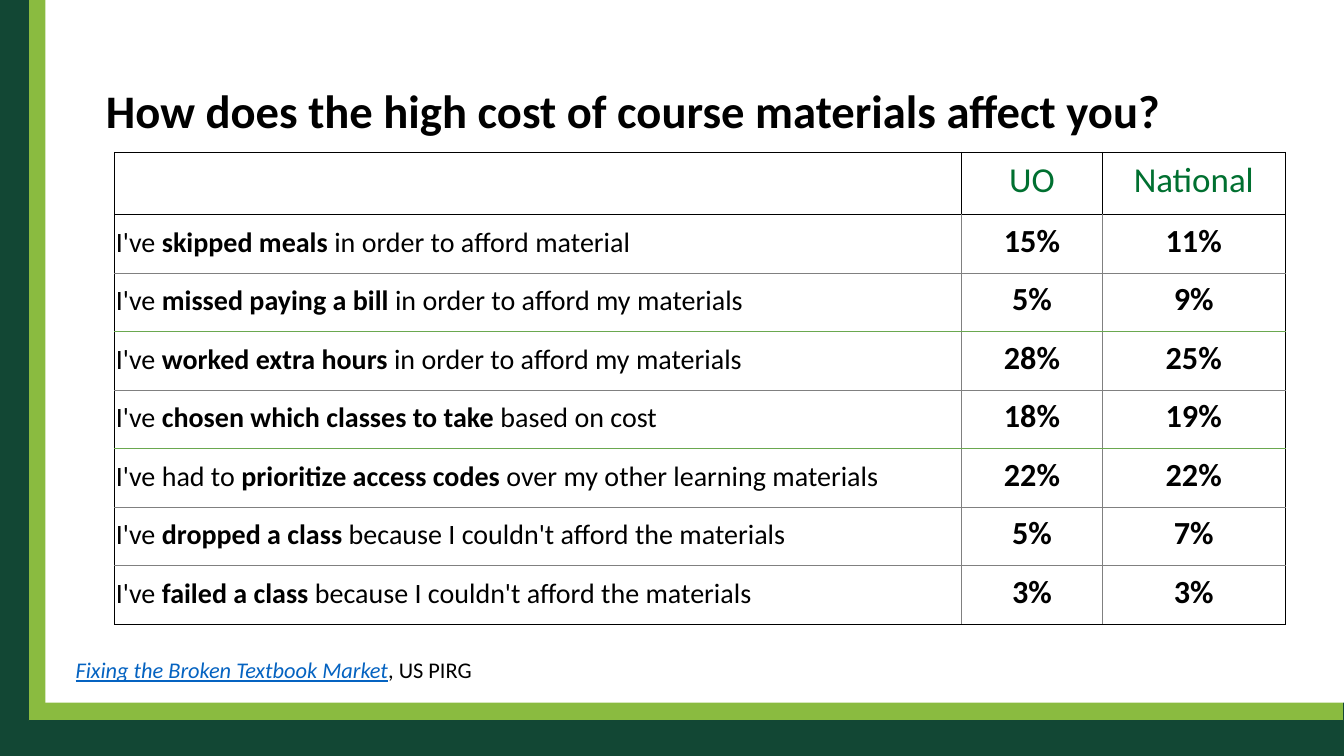
import pptx
import pptx.util
import pptx.dml.color
import pptx.enum.shapes
import pptx.enum.text
import pptx.oxml
import pptx.oxml.ns

RGBColor = pptx.dml.color.RGBColor
Align = pptx.enum.text.PP_ALIGN
Anchor = pptx.enum.text.MSO_ANCHOR
Inches = pptx.util.Inches
Pt = pptx.util.Pt

WIDE, HIGH = Inches(13.33), Inches(7.5)
FONT = "Calibri"
DARK = RGBColor(0x12, 0x47, 0x34)
LIME = RGBColor(0x8A, 0xBB, 0x40)
GREEN = RGBColor(0x00, 0x70, 0x30)
LEAF = RGBColor(0x6A, 0xA8, 0x4F)
GRAY = RGBColor(0x80, 0x80, 0x80)
BLUE = RGBColor(0x05, 0x63, 0xC1)
BLACK = RGBColor(0, 0, 0)
WHITE = RGBColor(255, 255, 255)

HEADS = ["UO", "National"]
COLS = [63.02, 10.43, 13.65]
ROW = 7.73
ROWS = [
    (("I've ", "skipped meals", " in order to afford material"), "15%", "11%"),
    (("I've ", "missed paying a bill", " in order to afford my materials"), "5%", "9%"),
    (("I've ", "worked extra hours", " in order to afford my materials"), "28%", "25%"),
    (("I've ", "chosen which classes to take", " based on cost"), "18%", "19%"),
    (("I've had to ", "prioritize access codes", " over my other learning materials"), "22%", "22%"),
    (("I've ", "dropped a class ", "because I couldn't afford the materials"), "5%", "7%"),
    (("I've ", "failed a class", " because I couldn't afford the materials"), "3%", "3%"),
]


def across(share):
    return round(WIDE * share / 100)


def down(share):
    return round(HIGH * share / 100)


def place(left, top, width, height):
    return across(left), down(top), across(width), down(height)


def style(font, size, color, bold=False):
    font.name, font.size, font.bold = FONT, Pt(size), bold
    font.color.rgb = color


def add_panel(slide, spot, color, line=None):
    panel = slide.shapes.add_shape(
        pptx.enum.shapes.MSO_SHAPE.RECTANGLE, *place(*spot))
    panel.shadow.inherit = False
    panel.fill.solid()
    panel.fill.fore_color.rgb = color
    if line is None:
        panel.line.fill.background()
    else:
        panel.line.color.rgb = line
        panel.line.width = Pt(0.75)


def add_text(slide, spot, anchor):
    frame = slide.shapes.add_textbox(*place(*spot)).text_frame
    frame.word_wrap = True
    frame.vertical_anchor = anchor
    frame.margin_left = frame.margin_right = Inches(0.13)
    frame.margin_top = frame.margin_bottom = Inches(0.13)
    return frame.paragraphs[0]


def add_title(slide):
    para = add_text(slide, (6.9, 5.33, 86.27, 19.33), Anchor.MIDDLE)
    para.text = "How does the high cost of course materials affect you?"
    para.line_spacing = 0.9
    style(para.font, 33.3, BLACK, True)


def add_note(slide):
    para = add_text(slide, (4.65, 85.07, 46.8, 7.2), Anchor.TOP)
    name, owner = para.add_run(), para.add_run()
    name.text = "Fixing the Broken Textbook Market"
    owner.text = ", US PIRG"
    style(name.font, 16, BLUE)
    name.font.italic = name.font.underline = True
    style(owner.font, 16, BLACK)


def set_edges(cell, colors):
    props = cell._tc.get_or_add_tcPr()
    for spot, (side, color) in enumerate(zip("LRTB", colors)):
        edge = pptx.oxml.parse_xml(
            f'<a:ln{side} {pptx.oxml.ns.nsdecls("a")} w="9525"><a:solidFill>'
            f'<a:srgbClr val="{color}"/></a:solidFill></a:ln{side}>')
        props.insert(spot, edge)


def edge_colors(row, col):
    def level(line):
        if line in (0, 1, len(ROWS) + 1):
            return BLACK
        return LEAF if line in (3, 5) else GRAY

    def upright(line):
        return BLACK if row == 0 or line in (0, len(COLS)) else GRAY

    return upright(col), upright(col + 1), level(row), level(row + 1)


def fill_cell(cell, text, size, color, bold):
    para = cell.text_frame.paragraphs[0]
    para.text = text
    para.alignment = Align.CENTER
    para.line_spacing = 1.15
    style(para.font, size, color, bold)


def fill_claim(cell, parts):
    para = cell.text_frame.paragraphs[0]
    for spot, part in enumerate(parts):
        run = para.add_run()
        run.text = part
        style(run.font, 20, BLACK, spot == 1)


def add_grid(slide):
    count = len(ROWS) + 1
    spot = place(8.55, 20.13, sum(COLS), ROW * count)
    grid = slide.shapes.add_table(count, len(COLS), *spot).table
    for col, share in zip(grid.columns, COLS):
        col.width = across(share)
    for row, line in enumerate(grid.rows):
        line.height = down(ROW)
        for col, cell in enumerate(line.cells):
            cell.fill.solid()
            cell.fill.fore_color.rgb = WHITE
            cell.vertical_anchor = Anchor.BOTTOM
            cell.margin_left = cell.margin_right = cell.margin_top = Inches(0.01)
            cell.margin_bottom = Inches(0.13)
            set_edges(cell, edge_colors(row, col))
    for col, head in enumerate(HEADS, 1):
        fill_cell(grid.cell(0, col), head, 25, GREEN, False)
    for row, (claim, *rates) in enumerate(ROWS, 1):
        fill_claim(grid.cell(row, 0), claim)
        for col, rate in enumerate(rates, 1):
            fill_cell(grid.cell(row, col), rate, 23, BLACK, True)


def main():
    deck = pptx.Presentation()
    deck.slide_width, deck.slide_height = WIDE, HIGH
    slide = deck.slides.add_slide(deck.slide_layouts[6])
    slide.background.fill.solid()
    slide.background.fill.fore_color.rgb = DARK
    add_panel(slide, (2.1, 0, 97.9, 95.33), LIME, DARK)
    add_panel(slide, (3.38, 0, 96.62, 92.93), WHITE)
    add_title(slide)
    add_note(slide)
    add_grid(slide)
    deck.save("out.pptx")


if __name__ == "__main__":
    main()
